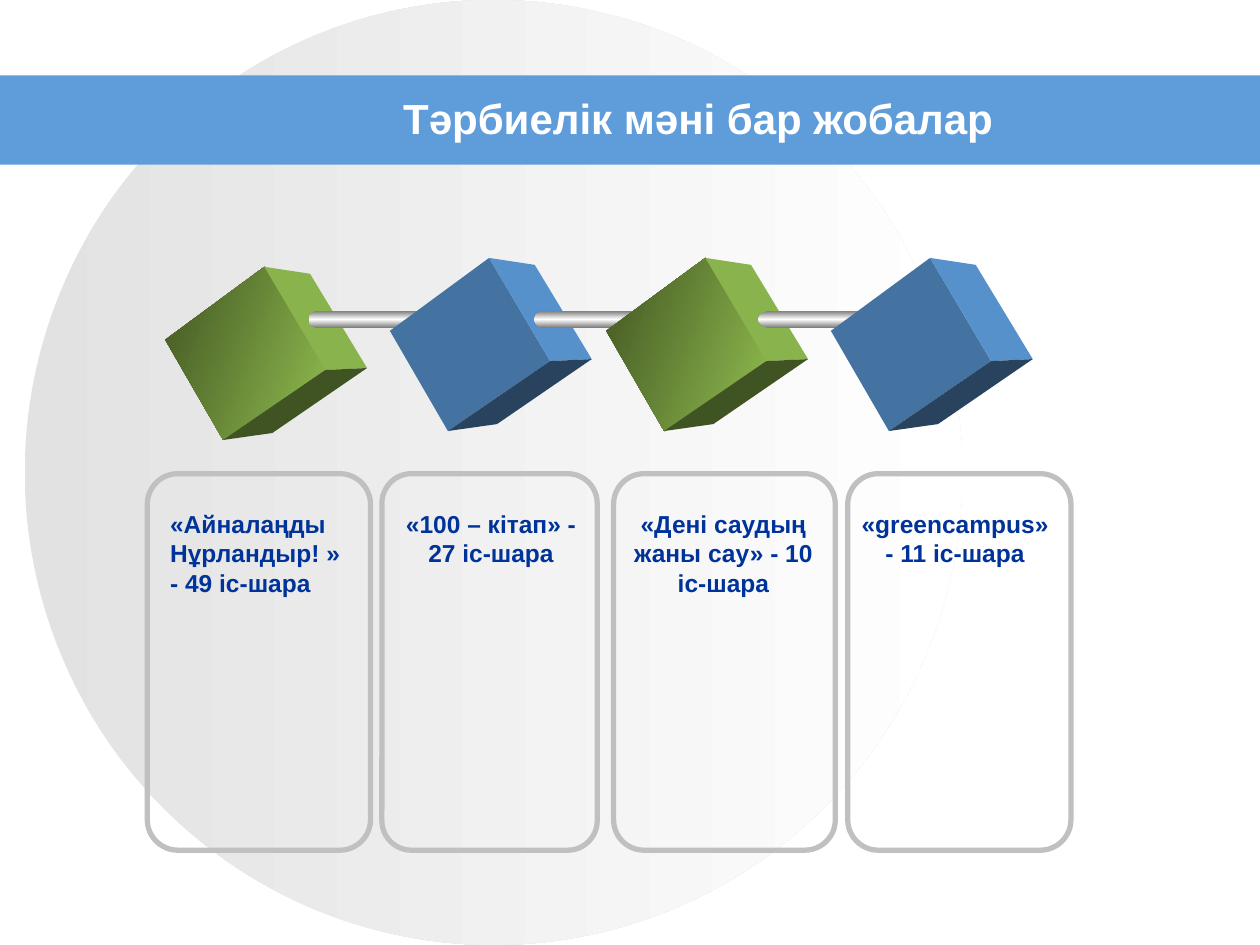
from lxml import etree
from pptx import Presentation
from pptx import util as u
from pptx.dml.color import RGBColor
from pptx.enum import shapes, text
from pptx.oxml.ns import qn

INK = {
    "white": "FFFFFF", "band": "5E9CDA", "navy": "003399", "frame": "C0C0C0",
    "mist": "E2E2E2", "steel": "7C7C7C",
}
GREEN = {"front": ["435622", "8FBC4F"], "side": ["89B34C"], "base": ["405322"]}
BLUE = {"front": ["4473A2"], "side": ["5791CB"], "base": ["29435E"]}
KIND = shapes.MSO_SHAPE

# Cube faces, in cm from the cube's top left corner
FACES = {
    "front": [(2, 0), (3.23, 2.08), (1.17, 3.49), (0, 1.47)],
    "side": [(2, 0), (2.92, 0.14), (4.07, 2.04), (3.23, 2.08)],
    "base": [(3.23, 2.08), (4.07, 2.04), (2.16, 3.35), (1.17, 3.49)],
}
# Left and top of each cube with its colours
CUBES = [(3.33, 5.38, GREEN), (7.86, 5.2, BLUE),
         (12.22, 5.2, GREEN), (16.75, 5.2, BLUE)]
# Left, cap width and bar length of each rod
RODS = [(6.22, 0.41, 2.03), (10.77, 0.41, 2.03), (15.29, 0.53, 2.67)]
# Frame left and width, text left and width, words, alignment
CARDS = [
    (2.97, 4.5, 3.18, 3.96, "«Айналаңды Нұрландыр! » - 49 іс-шара", "LEFT"),
    (7.7, 4.34, 7.92, 3.96, "«100 – кітап» - 27 іс-шара", "CENTER"),
    (12.37, 4.47, 12.5, 4.17, "«Дені саудың жаны сау» - 10 іс-шара", "CENTER"),
    (17.09, 4.5, 17.07, 4.37, "«greencampus» - 11 іс-шара", "CENTER"),
]


def paint(shape, tones, angle=0):
    """Fill with one colour, or with evenly spaced gradient stops."""
    shape.shadow.inherit = False
    shape.line.fill.background()
    if len(tones) == 1:
        shape.fill.solid()
        shape.fill.fore_color.rgb = RGBColor.from_string(tones[0])
        return
    shape.fill.gradient()
    shape.fill.gradient_angle = angle
    stops = shape.element.spPr.find(qn("a:gradFill")).find(qn("a:gsLst"))
    for old in list(stops):
        stops.remove(old)
    for i, tone in enumerate(tones):
        pos = str(100000 * i // (len(tones) - 1))
        stop = etree.SubElement(stops, qn("a:gs"), pos=pos)
        etree.SubElement(stop, qn("a:srgbClr"), val=tone)


def block(slide, kind, box, tones, angle=0):
    shape = slide.shapes.add_shape(kind, *map(u.Cm, box))
    paint(shape, tones, angle)
    return shape


def write(shape, words, size=14, color="navy", align="CENTER", anchor="TOP"):
    frame = shape.text_frame
    frame.word_wrap = True
    frame.vertical_anchor = text.MSO_ANCHOR[anchor]
    para = frame.paragraphs[0]
    para.alignment = text.PP_ALIGN[align]
    run = para.add_run()
    run.text = words
    run.font.name = "Arial"
    run.font.size = u.Pt(size)
    run.font.bold = True
    run.font.color.rgb = RGBColor.from_string(INK[color])


def cube(slide, left, top, tones):
    for face, points in FACES.items():
        spots = [(u.Cm(left + x), u.Cm(top + y)) for x, y in points]
        path = slide.shapes.build_freeform(*spots[0])
        path.add_line_segments(spots[1:], close=True)
        paint(path.convert_to_shape(), tones[face], 340)


def rod(slide, left, cap, length):
    shine = [INK["steel"], INK["white"], INK["steel"]]
    block(slide, KIND.OVAL, (left, 6.27, cap, 0.34), shine, 270)
    block(slide, KIND.RECTANGLE, (left + cap / 2, 6.27, length, 0.34),
          shine, 270)


def frame(slide, left, width):
    shape = slide.shapes.add_shape(
        KIND.ROUNDED_RECTANGLE, *map(u.Cm, (left, 9.55, width, 7.59)))
    shape.adjustments[0] = 0.137
    shape.shadow.inherit = False
    shape.fill.background()
    shape.line.color.rgb = RGBColor.from_string(INK["frame"])
    shape.line.width = u.Pt(3)


def label(slide, left, width, words, align):
    box = slide.shapes.add_textbox(*map(u.Cm, (left, 10.13, width, 2.06)))
    write(box, words, align=align)


def head(slide, words):
    title = slide.shapes.title
    title.left, title.top = u.Cm(5.72), u.Cm(1.7)
    title.width, title.height = u.Cm(16.71), u.Cm(1.35)
    write(title, words, size=24, color="white", anchor="MIDDLE")
    # Bring the title in front of the band
    title.element.getparent().append(title.element)


def main():
    deck = Presentation()
    deck.slide_width, deck.slide_height = u.Cm(25.4), u.Cm(19.05)
    slide = deck.slides.add_slide(deck.slide_layouts[5])

    # Backdrop and heading
    block(slide, KIND.OVAL, (0.5, 0, 18.9, 19.05), [INK["mist"], INK["white"]])
    block(slide, KIND.RECTANGLE, (0, 1.52, 25.4, 1.8), [INK["band"]])
    head(slide, "Тәрбиелік мәні бар жобалар")

    # Chain: each rod runs from one cube to behind the next
    for i, spot in enumerate(CUBES):
        if i:
            rod(slide, *RODS[i - 1])
        cube(slide, *spot)

    # Project cards
    for left, width, start, span, words, align in CARDS:
        frame(slide, left, width)
        label(slide, start, span, words, align)

    deck.save("out.pptx")


if __name__ == "__main__":
    main()
